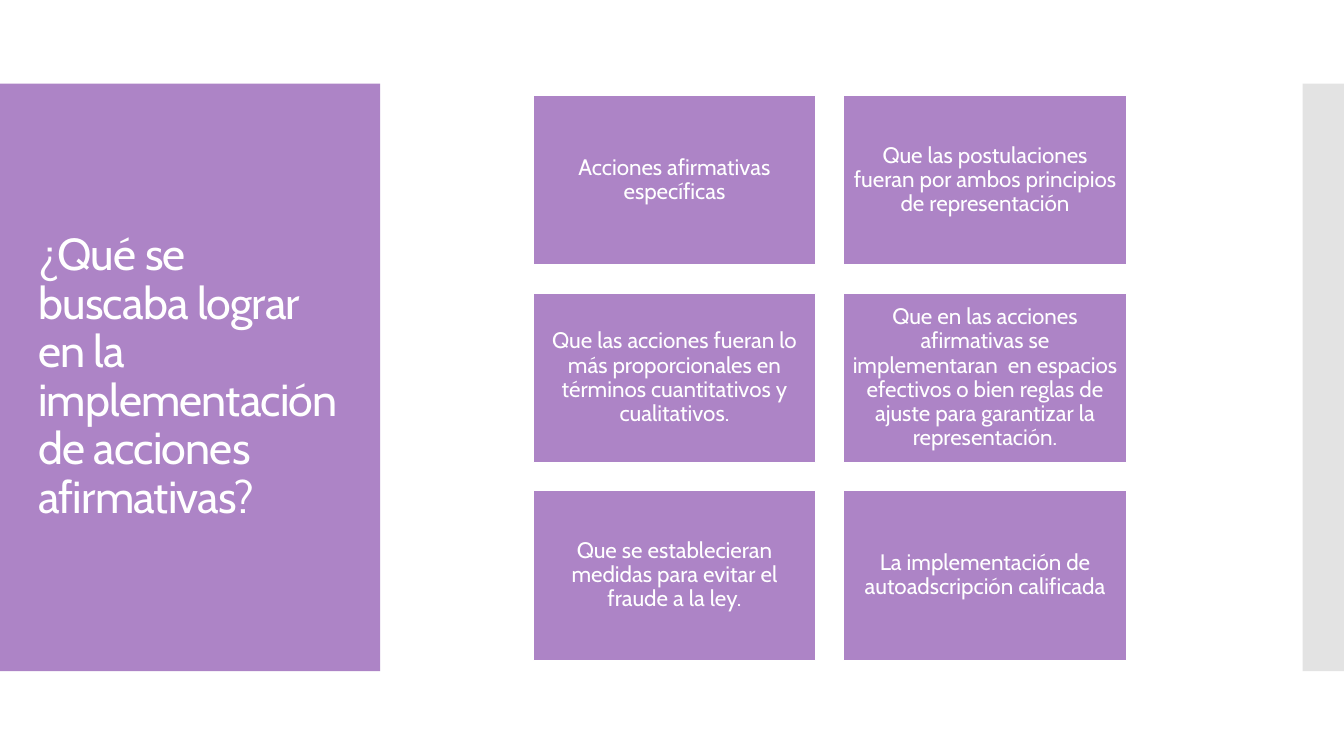
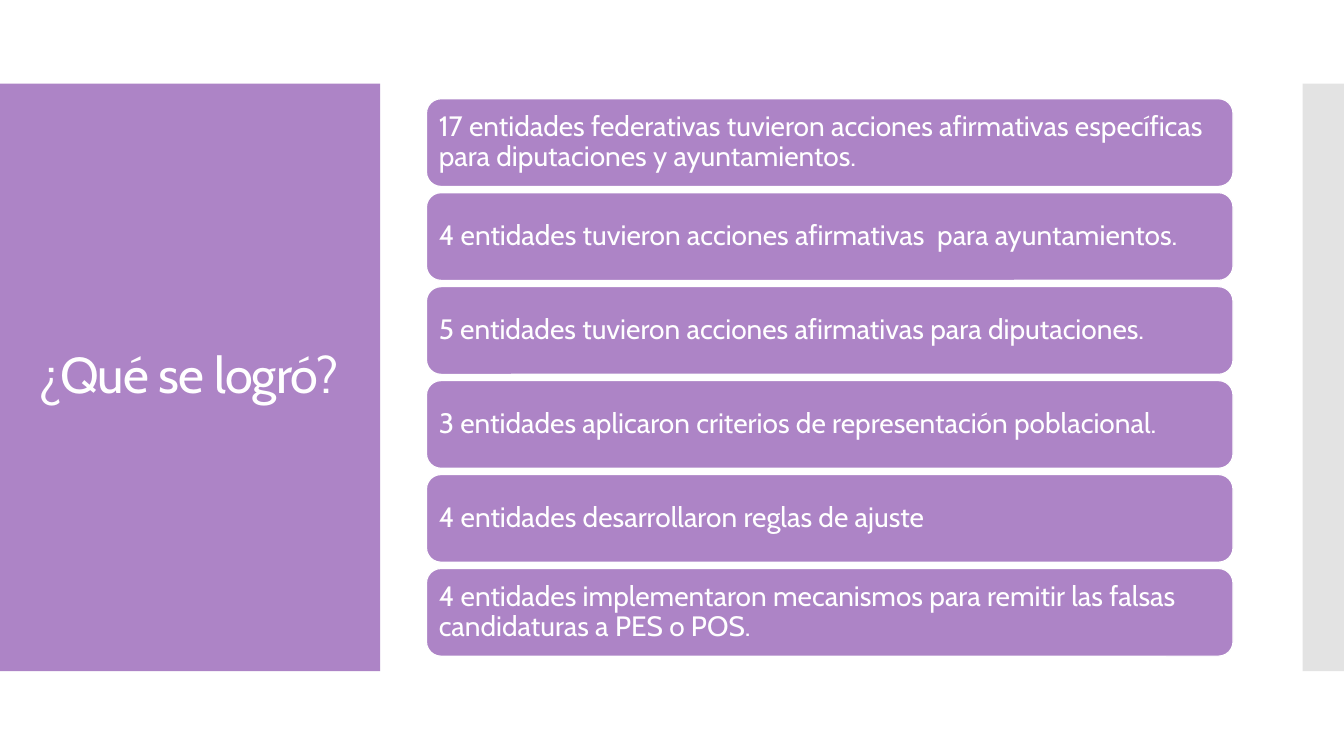
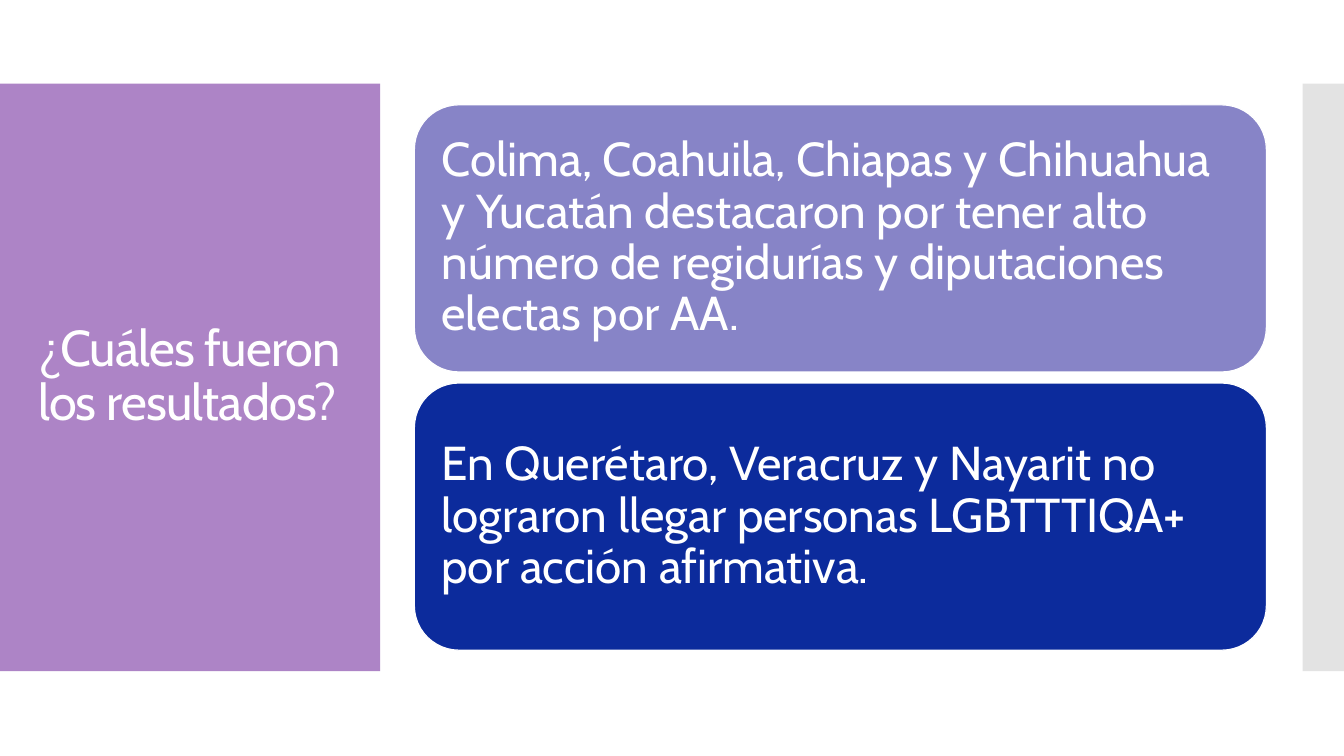
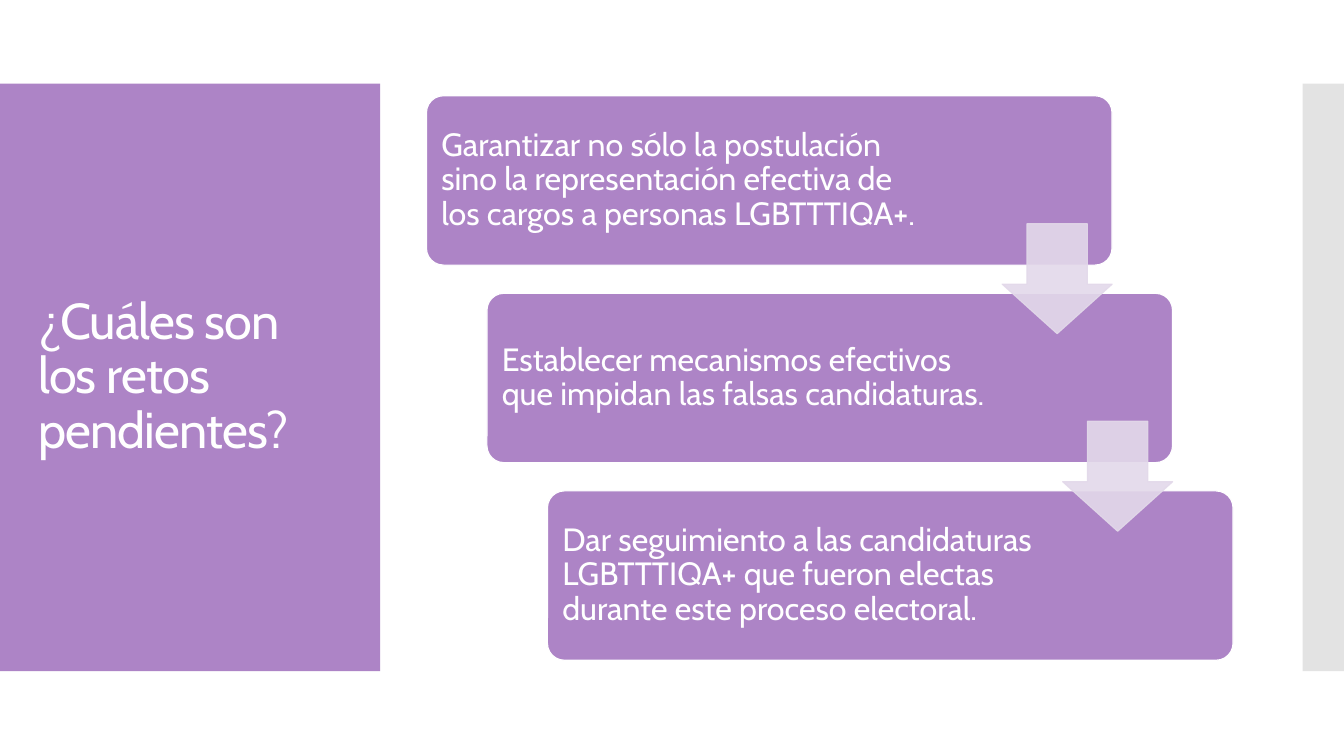
"""Build four slides on affirmative actions: goals, achievements, results and challenges."""
from lxml import etree
from pptx import Presentation
from pptx.dml.color import RGBColor
from pptx.enum import shapes, text
from pptx.oxml import ns
from pptx.util import Inches, Pt

COLORS = {
    "purple": "AD84C6",
    "periwinkle": "8784C7",
    "navy": "0C2B9C",
    "lilac": "E3D9EA",
    "gray": "C8C8C8",
    "white": "FFFFFF",
}
FONT = "Cabin"
RECTANGLE = shapes.MSO_SHAPE.RECTANGLE
ROUNDED = shapes.MSO_SHAPE.ROUNDED_RECTANGLE
DOWN_ARROW = shapes.MSO_SHAPE.DOWN_ARROW
LEFT, CENTER = text.PP_ALIGN.LEFT, text.PP_ALIGN.CENTER


def add_box(slide, kind, left, top, width, height, fill, line=None, opacity=100):
    shape = slide.shapes.add_shape(kind, Inches(left), Inches(top), Inches(width), Inches(height))
    shape.shadow.inherit = False
    shape.fill.solid()
    shape.fill.fore_color.rgb = RGBColor.from_string(COLORS[fill])
    if line:
        shape.line.color.rgb = RGBColor.from_string(COLORS[line])
        shape.line.width = Pt(0.85)
    else:
        shape.line.fill.background()
    if opacity < 100:
        for color in shape._element.spPr.iter(ns.qn("a:srgbClr")):
            etree.SubElement(color, ns.qn("a:alpha"), val=str(opacity * 1000))
    return shape


def write_text(shape, wording, size, margin, align=LEFT, right_margin=None):
    frame = shape.text_frame
    frame.word_wrap = True
    frame.vertical_anchor = text.MSO_ANCHOR.MIDDLE
    frame.margin_left = frame.margin_right = Inches(margin)
    frame.margin_top = frame.margin_bottom = Inches(min(margin, 0.14))
    if right_margin is not None:
        frame.margin_right = Inches(right_margin)
    paragraph = frame.paragraphs[0]
    paragraph.text = wording
    paragraph.alignment = align
    paragraph.line_spacing = 0.9
    paragraph.font.name = FONT
    paragraph.font.size = Pt(size)
    paragraph.font.color.rgb = RGBColor.from_string(COLORS["white"])
    return paragraph


presentation = Presentation()
presentation.slide_width = Inches(13.33)
presentation.slide_height = Inches(7.5)

titles = [
    ("¿Qué se buscaba lograr en la implementación de acciones afirmativas?", 32),
    ("¿Qué se logró?", 36),
    ("¿Cuáles fueron los resultados?", 36),
    ("¿Cuáles son los retos pendientes?", 36),
]
slides = []
for title, size in titles:
    slide = presentation.slides.add_slide(presentation.slide_layouts[6])
    panel = add_box(slide, RECTANGLE, 0, 0.83, 3.77, 5.83, "purple")
    paragraph = write_text(panel, title, size, 0.38, right_margin=0.37)
    paragraph.font._element.set("spc", "-60")
    add_box(slide, RECTANGLE, 12.92, 0.83, 0.41, 5.83, "gray", opacity=50)
    slides.append(slide)
goals_slide, achievements_slide, results_slide, challenges_slide = slides

goals = [
    "Acciones afirmativas específicas",
    "Que las postulaciones fueran por ambos principios de representación",
    "Que las acciones fueran lo más proporcionales en términos cuantitativos y cualitativos.",
    "Que en las acciones afirmativas se implementaran  en espacios efectivos o bien reglas de "
    "ajuste para garantizar la representación.",
    "Que se establecieran medidas para evitar el fraude a la ley.",
    "La implementación de autoadscripción calificada",
]
card_width, card_height, card_gap = 2.8, 1.68, 0.28
for index, goal in enumerate(goals):
    row, column = divmod(index, 2)
    left = 5.29 + column * (card_width + card_gap)
    top = 0.95 + row * (card_height + card_gap)
    card = add_box(goals_slide, RECTANGLE, left, top, card_width, card_height, "purple", "white")
    write_text(card, goal, 16, 0.07, CENTER)

achievements = [
    "17 entidades federativas tuvieron acciones afirmativas específicas para diputaciones y "
    "ayuntamientos.",
    "4 entidades tuvieron acciones afirmativas  para ayuntamientos.",
    "5 entidades tuvieron acciones afirmativas para diputaciones.",
    "3 entidades aplicaron criterios de representación poblacional.",
    "4 entidades desarrollaron reglas de ajuste",
    "4 entidades implementaron mecanismos para remitir las falsas candidaturas a PES o POS.",
]
bar_pitch = (5.64 - 0.98) / (len(achievements) - 1)
for index, achievement in enumerate(achievements):
    top = 0.98 + index * bar_pitch
    bar = add_box(achievements_slide, ROUNDED, 4.23, top, 8, 0.87, "purple", "white")
    write_text(bar, achievement, 20, 0.08)

results = [
    ("Colima, Coahuila, Chiapas y Chihuahua y Yucatán destacaron por tener alto número de "
     "regidurías y diputaciones electas por AA.", "periwinkle"),
    ("En Querétaro, Veracruz y Nayarit no lograron llegar personas LGBTTTIQA+ por acción "
     "afirmativa.", "navy"),
]
for index, (result, fill) in enumerate(results):
    top = 1.04 + index * 2.76
    block = add_box(results_slide, ROUNDED, 4.11, top, 8.45, 2.65, fill, "white")
    write_text(block, result, 34, 0.14)

challenges = [
    "Garantizar no sólo la postulación sino la representación efectiva de los cargos a personas "
    "LGBTTTIQA+.",
    "Establecer mecanismos efectivos que impidan las falsas candidaturas.",
    "Dar seguimiento a las candidaturas LGBTTTIQA+ que fueron electas durante este proceso "
    "electoral.",
]
step_shift, step_pitch = 0.6, 1.96
for index, challenge in enumerate(challenges):
    left, top = 4.23 + index * step_shift, 0.95 + index * step_pitch
    step = add_box(challenges_slide, ROUNDED, left, top, 6.8, 1.68, "purple", "white")
    step.adjustments[0] = 0.1
    write_text(step, challenge, 23, 0.1, right_margin=1.8)
for index in range(len(challenges) - 1):
    left, top = 9.94 + index * step_shift, 2.22 + index * step_pitch
    arrow = add_box(challenges_slide, DOWN_ARROW, left, top, 1.09, 1.09, "lilac", "lilac", 90)
    arrow.adjustments[0] = 0.55
    arrow.adjustments[1] = 0.45

presentation.save("out.pptx")
